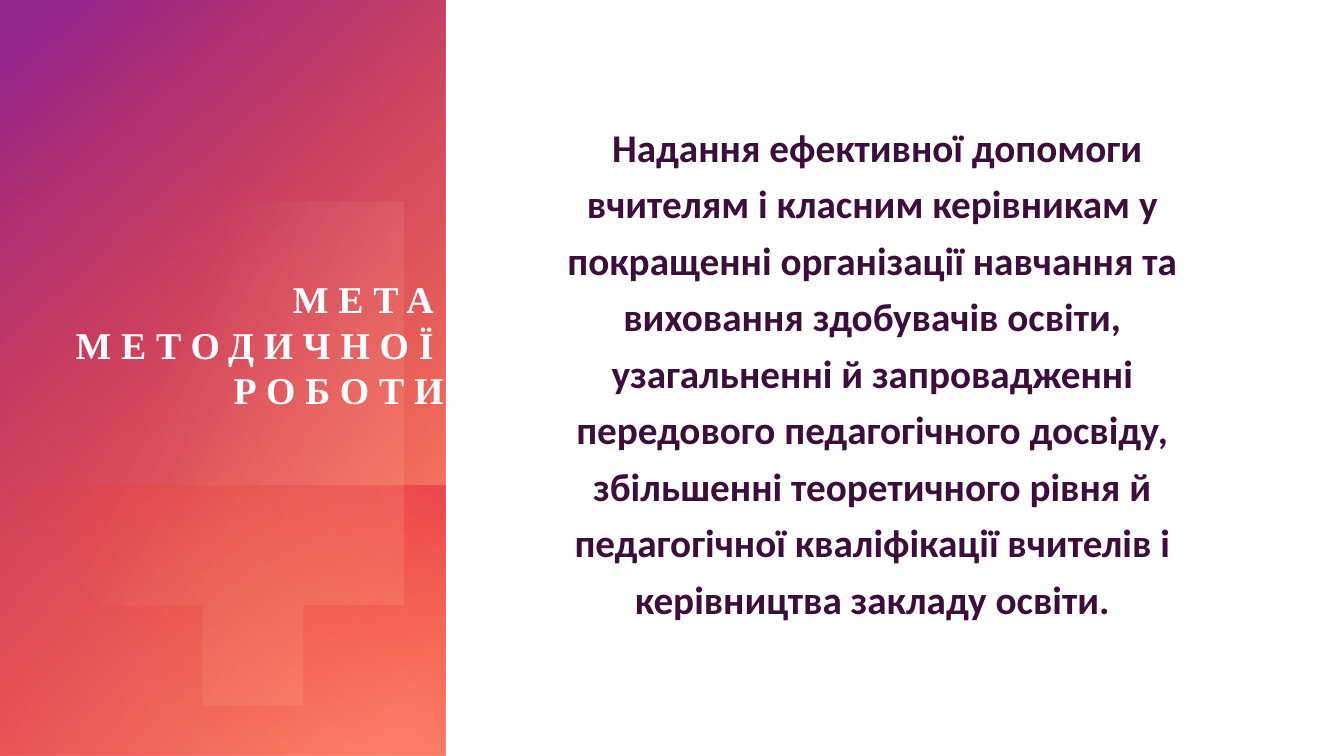
import math
import lxml.etree
import pptx
import pptx.util
import pptx.dml.color
import pptx.enum.shapes
import pptx.enum.text
import pptx.oxml.ns

inch = pptx.util.Inches
point = pptx.util.Pt
qn = pptx.oxml.ns.qn


def tint(color, code):
    color.rgb = pptx.dml.color.RGBColor.from_string(code)


def blend(shape, angle, stops):
    shape.shadow.inherit = False
    shape.line.fill.background()
    shape.fill.gradient()
    shape.fill.gradient_angle = 360 - angle
    for stop, (place, code, share) in zip(shape.fill.gradient_stops, stops):
        stop.position = place / 100
        tint(stop.color, code)
        if share < 100:
            alpha = lxml.etree.SubElement(stop._gs[0], qn("a:alpha"))
            alpha.set("val", str(share * 1000))


deck = pptx.Presentation()
deck.slide_width = inch(13.33)
deck.slide_height = inch(7.5)
slide = deck.slides.add_slide(deck.slide_layouts[1])
shapes = slide.shapes
title = shapes.title
body = slide.placeholders[1]

side = 4.42
high = 7.5
seam = 4.82
layers = [
    (0, 210, [(8, "FF907A", 100), (100, "DA002F", 72)]),
    (0, 230, [(0, "FE4A00", 0), (96, "92248E", 100)]),
    (seam, 140, [(2, "DA002F", 35), (67, "FE4A00", 0)]),
]
for top, angle, stops in layers:
    panel = shapes.add_shape(
        pptx.enum.shapes.MSO_SHAPE.RECTANGLE,
        0, inch(top), inch(side), inch(high - top),
    )
    blend(panel, angle, stops)

mid_x, mid_y, radius = 2.47, 4.12, 2.4
cut = math.degrees(math.acos((side - mid_x) / radius))
count = 120
dots = []
for step in range(count + 1):
    turn = math.radians(cut + (360 - 2 * cut) * step / count)
    dots.append((mid_x + radius * math.cos(turn), mid_y + radius * math.sin(turn)))
path = shapes.build_freeform(*dots[0], scale=inch(1))
path.add_line_segments(dots[1:], close=True)
disc = path.convert_to_shape()
blend(disc, 22, [(39, "FFDBCC", 0), (100, "FF907A", 29)])

align = pptx.enum.text.PP_ALIGN
anchor = pptx.enum.text.MSO_ANCHOR
serif = "Times New Roman"
dark = "3C0F3A"
goal = (
    "Надання ефективної допомоги вчителям і класним керівникам у "
    "покращенні організації навчання та виховання здобувачів освіти, "
    "узагальненні й запровадженні передового педагогічного досвіду, "
    "збільшенні теоретичного рівня й педагогічної кваліфікації вчителів і "
    "керівництва закладу освіти."
)
blocks = [
    (title, (0.58, 0.79, 3.82, 3.3), anchor.BOTTOM, align.RIGHT, 1, 0,
     [("МЕТА МЕТОДИЧНОЇ РОБОТИ", serif, 27, "FFFFFF", True, 7)]),
    (body, (5.22, 1.13, 6.86, 5.3), anchor.TOP, align.CENTER, 1.2, 10,
     [(" ", serif, 28, dark, False, 0), (goal, "Calibri", 28, dark, True, 0)]),
]
for holder, box, hold, line_up, pitch, gap, runs in blocks:
    holder.left, holder.top, holder.width, holder.height = map(inch, box)
    shapes._spTree.append(holder._element)
    frame = holder.text_frame
    frame.word_wrap = True
    frame.auto_size = pptx.enum.text.MSO_AUTO_SIZE.NONE
    frame.vertical_anchor = hold
    frame.margin_left = frame.margin_right = 0
    frame.margin_top = frame.margin_bottom = 0
    para = frame.paragraphs[0]
    para.alignment = line_up
    para.line_spacing = pitch
    para.space_before = point(gap)
    form = para._p.get_or_add_pPr()
    form.set("marL", "0")
    form.set("indent", "0")
    lxml.etree.SubElement(form, qn("a:buNone"))
    for text, face, size, code, bold, space in runs:
        run = para.add_run()
        run.text = text
        run.font.name = face
        run.font.size = point(size)
        run.font.bold = bold
        tint(run.font.color, code)
        if space:
            run._r.get_or_add_rPr().set("spc", str(space * 100))

deck.save("out.pptx")
